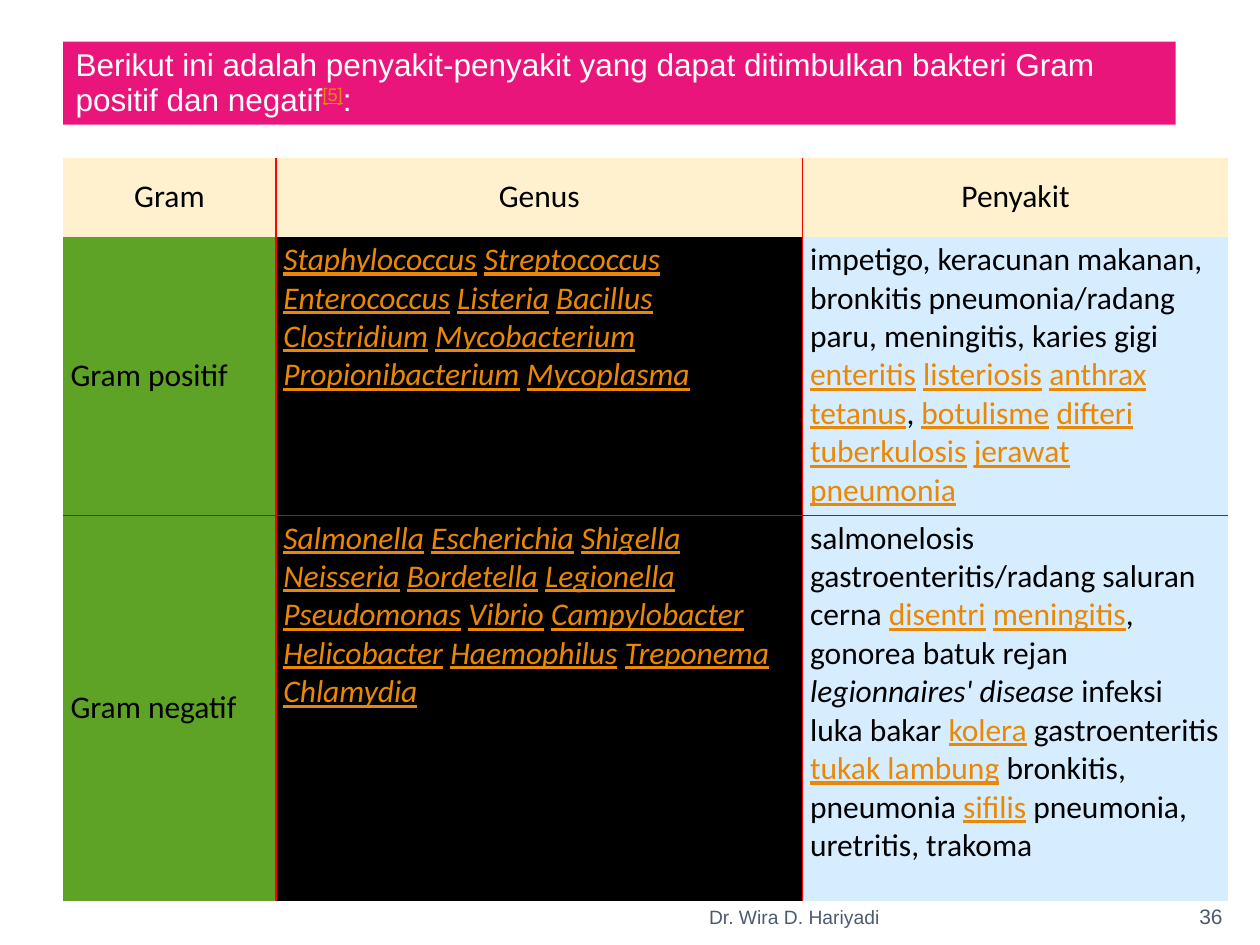
from lxml.etree import SubElement
from pptx import Presentation
from pptx.dml.color import RGBColor
from pptx.enum.text import MSO_ANCHOR as Anchor, MSO_AUTO_SIZE as Fit, PP_ALIGN as Align
from pptx.oxml.ns import qn
from pptx.util import Inches, Pt

BLACK = RGBColor(0x00, 0x00, 0x00)
WHITE = RGBColor(0xFF, 0xFF, 0xFF)
PINK = RGBColor(0xEA, 0x15, 0x7A)
AMBER = RGBColor(0xEB, 0x88, 0x03)
CREAM = RGBColor(0xFF, 0xF1, 0xCE)
GREEN = RGBColor(0x5F, 0xA3, 0x26)
SKY = RGBColor(0xD6, 0xEC, 0xFF)
SLATE = RGBColor(0x4E, 0x5B, 0x6F)
RED = RGBColor(0xFF, 0x00, 0x00)
DARK = RGBColor(0x40, 0x40, 0x40)
PLAIN_GRID = "{2D5ABB26-0587-4C30-8999-92F81FD0307C}"

TITLE = [
    ("Berikut ini adalah penyakit-penyakit yang dapat ditimbulkan bakteri Gram positif dan negatif", ""),
    ("[5]", "link super"),
    (":", ""),
]
HEADS = ["Gram", "Genus", "Penyakit"]
GENERA = [
    "Staphylococcus Streptococcus Enterococcus Listeria Bacillus Clostridium "
    "Mycobacterium Propionibacterium Mycoplasma",
    "Salmonella Escherichia Shigella Neisseria Bordetella Legionella Pseudomonas "
    "Vibrio Campylobacter Helicobacter Haemophilus Treponema Chlamydia",
]


def links(names, style="link"):
    return [run for name in names.split() for run in ((name, style), (" ", ""))]


ILLS = [
    [("impetigo, keracunan makanan, bronkitis pneumonia/radang paru, meningitis, karies gigi ", "")]
    + links("enteritis listeriosis anthrax")
    + [("tetanus", "link"), (", ", "")]
    + links("botulisme difteri tuberkulosis jerawat pneumonia"),
    [
        ("salmonelosis gastroenteritis/radang saluran cerna ", ""),
        ("disentri", "link"), (" ", ""), ("meningitis", "link"),
        (", gonorea batuk rejan ", ""),
        ("legionnaires' disease ", "italic"),
        ("infeksi luka bakar ", ""), ("kolera", "link"),
        (" gastroenteritis ", ""), ("tukak lambung", "link"),
        (" bronkitis, pneumonia ", ""), ("sifilis", "link"),
        (" pneumonia, uretritis, trakoma", ""),
    ],
]
ROWS = [HEADS] + [
    [name, links(genus, "link italic"), ills]
    for name, genus, ills in zip(["Gram positif", "Gram negatif"], GENERA, ILLS)
]
FILLS = [GREEN, BLACK, SKY]
WIDTHS = [1.69, 4.18, 3.38]
HEIGHTS = [0.63, 2.21, 3.06]
NOTES = [
    ("Dr. Wira D. Hariyadi", (1, 7.02, 6.08, 0.4), 11, Align.RIGHT),
    ("36", (9.42, 7.02, 0.5, 0.4), 12, Align.LEFT),
]


def write(frame, text, size=18, face="Calibri", color=BLACK, align=Align.LEFT, space=None):
    para = frame.paragraphs[0]
    para.alignment = align
    if space:
        para.line_spacing = space
    for words, style in [(text, "")] if isinstance(text, str) else text:
        run = para.add_run()
        run.text = words
        font = run.font
        font.size, font.name, font.bold = Pt(size), face, False
        font.italic = "italic" in style
        font.underline = "link" in style
        font.color.rgb = AMBER if "link" in style else color
        if "super" in style:
            run._r.get_or_add_rPr().set("baseline", "30000")


def edge(cell, side, color, width):
    line = SubElement(cell._tc.get_or_add_tcPr(), qn("a:ln" + side), w=str(Pt(width)))
    fill = SubElement(line, qn("a:solidFill"))
    SubElement(fill, qn("a:srgbClr"), val=str(color))


def place(shape, box):
    shape.left, shape.top, shape.width, shape.height = map(Inches, box)


def add_title(slide):
    title = slide.shapes.title
    place(title, (0.5, 0.33, 8.83, 0.66))
    title.fill.solid()
    title.fill.fore_color.rgb = PINK
    frame = title.text_frame
    frame.word_wrap = True
    frame.auto_size = Fit.NONE
    frame.vertical_anchor = Anchor.MIDDLE
    write(frame, TITLE, face="Arial", color=WHITE, space=0.93)


def add_grid(slide):
    box = map(Inches, (0.5, 1.25, sum(WIDTHS), sum(HEIGHTS)))
    table = slide.shapes.add_table(len(ROWS), len(HEADS), *box).table
    table.horz_banding = table.first_row = False
    table._tbl.tblPr.find(qn("a:tableStyleId")).text = PLAIN_GRID
    for col, width in zip(table.columns, WIDTHS):
        col.width = Inches(width)
    for row, height in zip(table.rows, HEIGHTS):
        row.height = Inches(height)
    last = len(HEADS) - 1
    for r, row in enumerate(ROWS):
        for c, text in enumerate(row):
            cell = table.cell(r, c)
            head = r == 0
            if c > 0:
                edge(cell, "L", RED, 1)
            if c < last:
                edge(cell, "R", RED, 1)
            if r == 2:
                edge(cell, "T", DARK, 0.5)
            if r == 1:
                edge(cell, "B", DARK, 0.5)
            cell.fill.solid()
            cell.fill.fore_color.rgb = CREAM if head else FILLS[c]
            cell.margin_left = cell.margin_right = Inches(0.06)
            cell.margin_top = cell.margin_bottom = Inches(0.03)
            cell.vertical_anchor = Anchor.MIDDLE if head or c == 0 else Anchor.TOP
            write(cell.text_frame, text, align=Align.CENTER if head else Align.LEFT)


def add_notes(slide):
    for text, box, size, align in NOTES:
        frame = slide.shapes.add_textbox(*map(Inches, box)).text_frame
        frame.word_wrap = True
        frame.vertical_anchor = Anchor.BOTTOM
        write(frame, text, size=size, face="Arial", color=SLATE, align=align)


def main():
    deck = Presentation()
    deck.slide_width, deck.slide_height = Inches(10), Inches(7.5)
    slide = deck.slides.add_slide(deck.slide_layouts[5])
    add_notes(slide)
    add_grid(slide)
    add_title(slide)
    deck.save("out.pptx")


if __name__ == "__main__":
    main()
